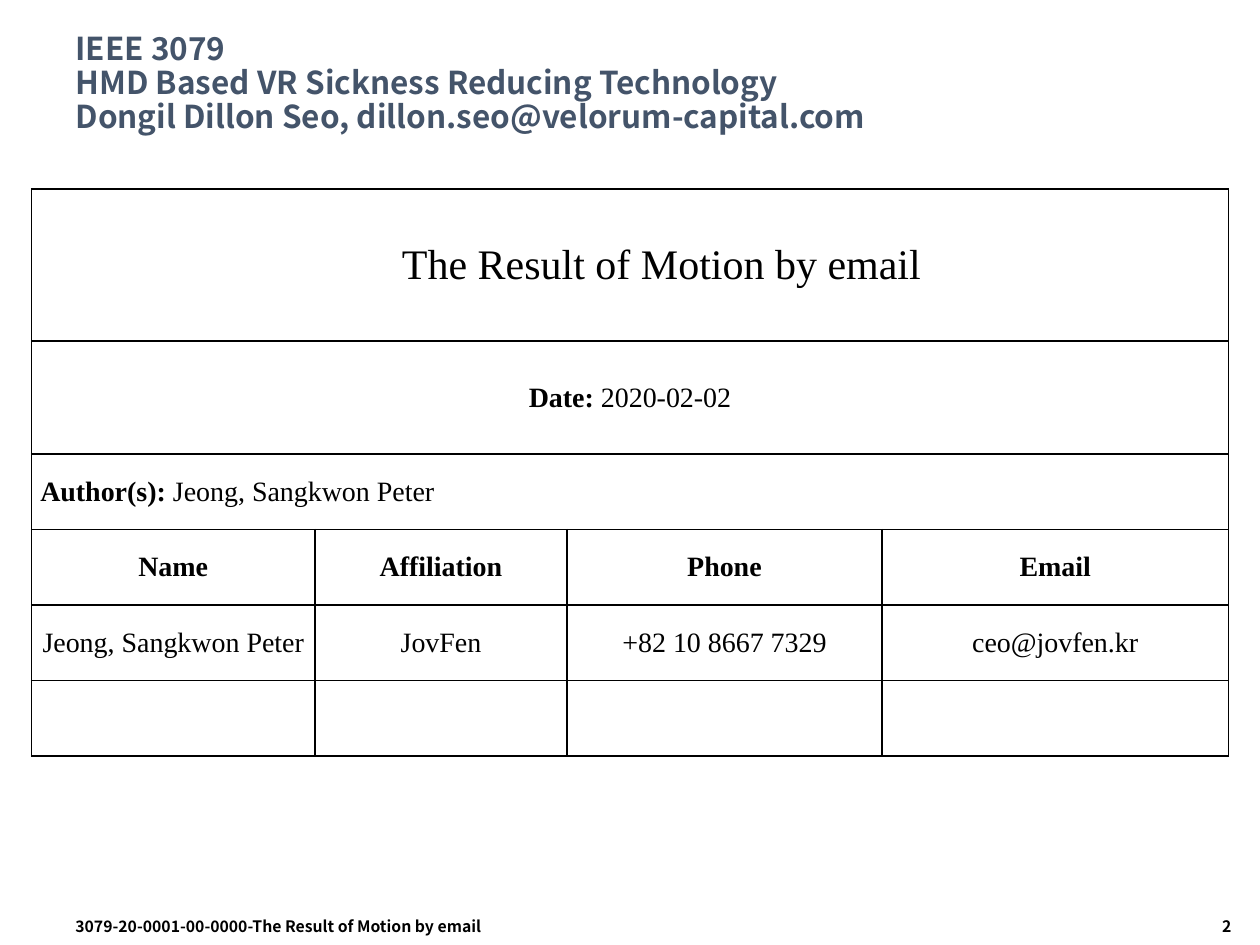
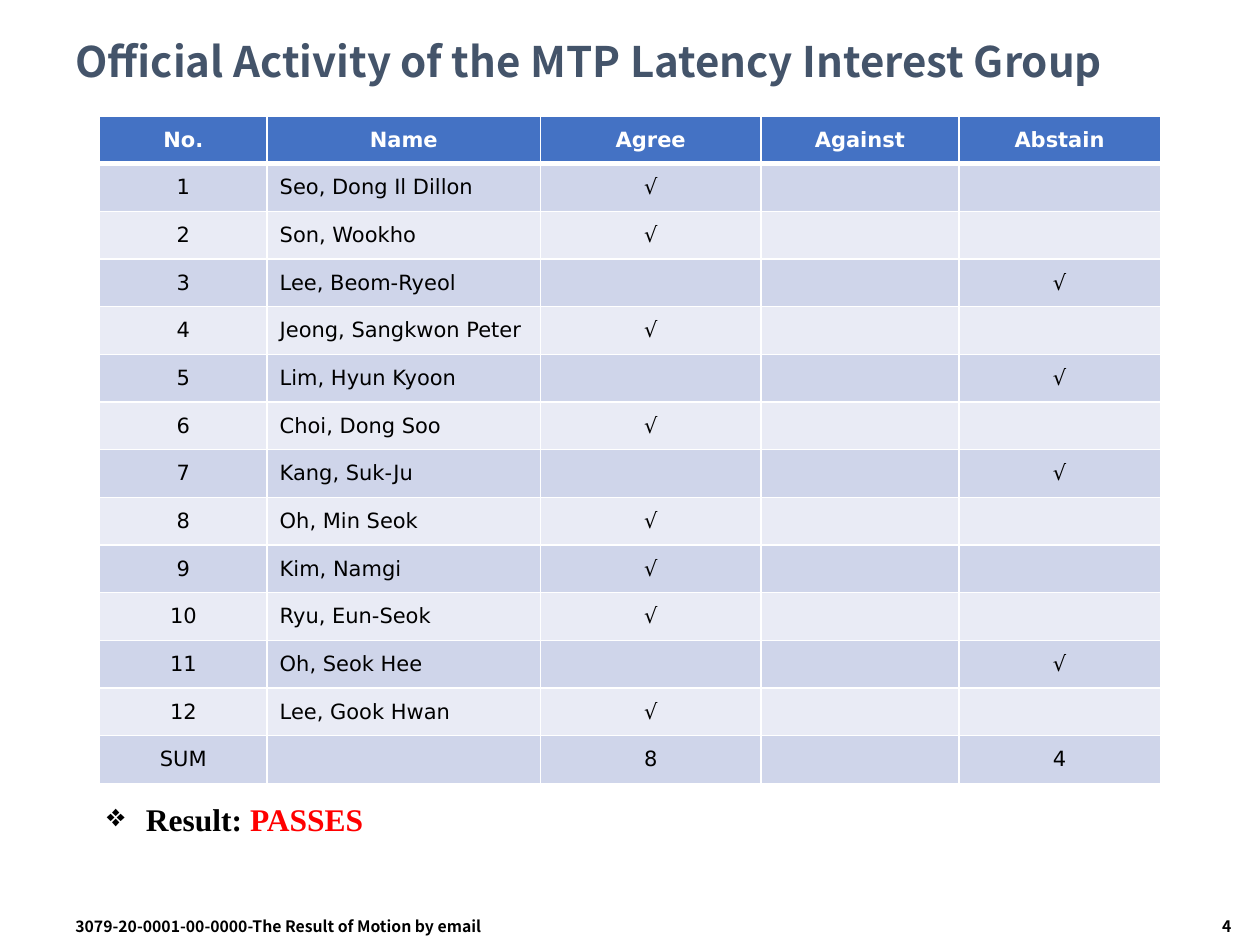
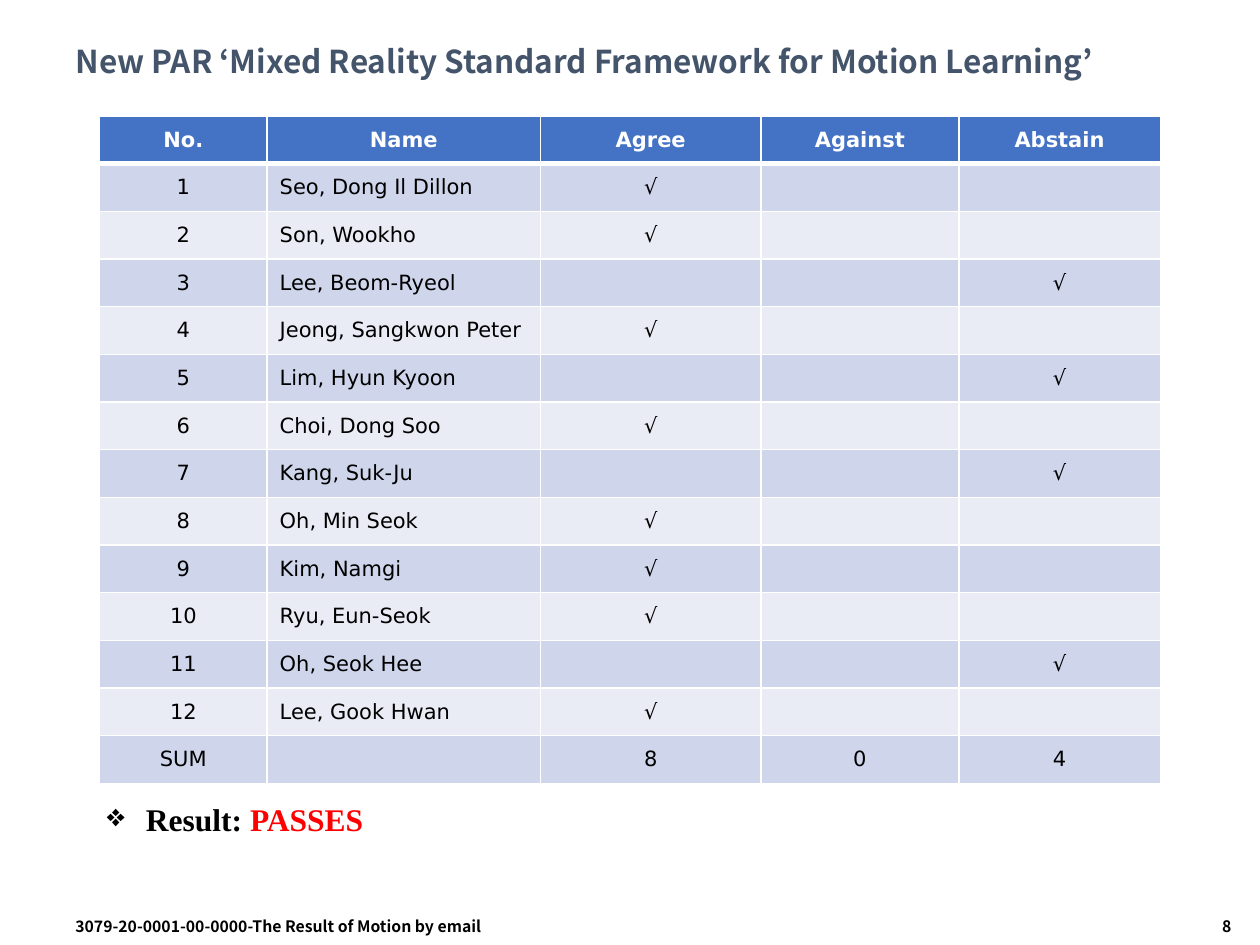
"""Build the three slides reporting the result of a motion by email."""
from dataclasses import dataclass
from typing import Optional

from lxml import etree
from pptx import Presentation
from pptx import util as u
from pptx.dml.color import RGBColor
from pptx.enum import text
from pptx.oxml import ns

SLIDE_WIDTH, SLIDE_HEIGHT = u.Inches(10), u.Inches(7.5)
GRID_COLUMNS, GRID_ROWS = 100, 75

BLACK = RGBColor(0x00, 0x00, 0x00)
WHITE = RGBColor(0xFF, 0xFF, 0xFF)
RED = RGBColor(0xFF, 0x00, 0x00)
TITLE_SLATE = RGBColor(0x44, 0x54, 0x6A)
HEADER_BLUE = RGBColor(0x44, 0x72, 0xC4)
BANDS = (RGBColor(0xE9, 0xEB, 0xF5), RGBColor(0xCF, 0xD5, 0xEA))

LEFT, CENTER, RIGHT = text.PP_ALIGN.LEFT, text.PP_ALIGN.CENTER, text.PP_ALIGN.RIGHT
FOOTER_TEXT = "3079-20-0001-00-0000-The Result of Motion by email"
VOTE_HEADINGS = ("No.", "Name", "Agree", "Against", "Abstain")
VOTERS = (
    "Seo, Dong Il Dillon", "Son, Wookho", "Lee, Beom-Ryeol", "Jeong, Sangkwon Peter",
    "Lim, Hyun Kyoon", "Choi, Dong Soo", "Kang, Suk-Ju", "Oh, Min Seok",
    "Kim, Namgi", "Ryu, Eun-Seok", "Oh, Seok Hee", "Lee, Gook Hwan",
)
ABSTAINERS = {3, 5, 7, 11}


@dataclass(frozen=True)
class Frame:
    """A rectangle in grid columns and rows."""
    column: float
    row: float
    columns: float
    rows: float

    def lengths(self) -> tuple:
        """Return left, top, width and height as lengths."""
        across, down = SLIDE_WIDTH / GRID_COLUMNS, SLIDE_HEIGHT / GRID_ROWS
        return (u.Emu(round(self.column * across)), u.Emu(round(self.row * down)),
                u.Emu(round(self.columns * across)), u.Emu(round(self.rows * down)))


@dataclass(frozen=True)
class Style:
    """The look of a run of text."""
    font: str
    size: float
    color: RGBColor = BLACK
    bold: bool = False


@dataclass(frozen=True)
class Piece:
    """Some text in one style."""
    words: str
    style: Style


@dataclass(frozen=True)
class Borders:
    """Line widths in points around a cell, in one colour."""
    color: RGBColor
    top: float = 1
    bottom: float = 1


@dataclass(frozen=True)
class Ballot:
    """A slide that shows how the members voted."""
    title: str
    title_size: float
    page: int
    against: str


FOOTER = Style("Noto Sans CJK KR", 9, bold=True)
COVER_HEADING = Style("Times New Roman", 24)
COVER = Style("Times New Roman", 16)
COVER_BOLD = Style("Times New Roman", 16, bold=True)
VOTE_HEADER = Style("DejaVu Sans", 12, WHITE, True)
VOTE = Style("DejaVu Sans", 12)
RESULT = Style("Times New Roman", 18, bold=True)
VERDICT = Style("Times New Roman", 18, RED, True)

COVER_TITLE_FRAME = Frame(5, 1.7, 90, 10)
TITLE_FRAME = Frame(5, 1.7, 90, 6.7)
FOOTER_FRAME = Frame(5, 72.3, 44.2, 2.7)
PAGE_FRAME = Frame(82.5, 72.3, 16.2, 2.7)
COVER_FRAME = Frame(2.5, 15, 95, 45)
VOTE_FRAME = Frame(7.9, 9.2, 84.2, 53)
RESULT_FRAME = Frame(7.5, 63, 22.6, 4)

COVER_COLUMNS = (2.25, 2, 2.5, 2.75)
COVER_ROWS = (1.21, 0.9, 0.6, 0.6, 0.6, 0.6)
VOTE_COLUMNS = (1.33, 2.17, 1.75, 1.57, 1.6)

BALLOTS = (
    Ballot("Official Activity of the MTP Latency Interest Group", 24, 4, ""),
    Ballot("New PAR ‘Mixed Reality Standard Framework for Motion Learning’", 18, 8, "0"),
)


def write(paragraph, *pieces: Piece, align=LEFT) -> None:
    """Write styled runs into a paragraph."""
    paragraph.alignment = align
    for piece in pieces:
        run = paragraph.add_run()
        run.text = piece.words
        font = run.font
        font.name, font.size = piece.style.font, u.Pt(piece.style.size)
        font.bold = piece.style.bold
        font.color.rgb = piece.style.color


def add_text(slide, frame: Frame, *pieces: Piece, align=LEFT):
    """Add a wrapped text box and return it."""
    box = slide.shapes.add_textbox(*frame.lengths())
    box.text_frame.word_wrap = True
    write(box.text_frame.paragraphs[0], *pieces, align=align)
    return box


def add_slide(presentation, frame: Frame, lines: tuple, title_size: float, page: int):
    """Add a slide with its title, footer and page number."""
    slide = presentation.slides.add_slide(presentation.slide_layouts[5])
    title = slide.shapes.title
    title.left, title.top, title.width, title.height = frame.lengths()
    title.text_frame.auto_size = text.MSO_AUTO_SIZE.NONE
    title.text_frame.vertical_anchor = text.MSO_ANCHOR.MIDDLE
    paragraph = title.text_frame.paragraphs[0]
    paragraph.line_spacing = 0.9
    style = Style("Noto Sans CJK KR", title_size, TITLE_SLATE, True)
    for index, line in enumerate(lines):
        if index:
            paragraph.add_line_break()
        write(paragraph, Piece(line, style))
    add_text(slide, PAGE_FRAME, Piece(str(page), FOOTER), align=RIGHT)
    add_text(slide, FOOTER_FRAME, Piece(FOOTER_TEXT, FOOTER))
    return slide


def add_grid(slide, frame: Frame, column_shares: tuple, row_shares: tuple):
    """Add a plain table whose columns and rows share out the frame."""
    shape = slide.shapes.add_table(len(row_shares), len(column_shares), *frame.lengths())
    width, height = shape.width, shape.height
    table = shape.table
    table.first_row = table.horz_banding = False
    for column, share in zip(table.columns, column_shares):
        column.width = u.Emu(round(width * share / sum(column_shares)))
    for row, share in zip(table.rows, row_shares):
        row.height = u.Emu(round(height * share / sum(row_shares)))
    return table


def format_cell(cell, borders: Borders, fill: Optional[RGBColor], empty_size: float) -> None:
    """Set a cell's borders, fill, anchor and empty text height."""
    cell.vertical_anchor = text.MSO_ANCHOR.MIDDLE
    properties = cell._tc.get_or_add_tcPr()
    for side, points in (("L", 1), ("R", 1), ("T", borders.top), ("B", borders.bottom)):
        line = etree.SubElement(properties, ns.qn(f"a:ln{side}"), w=str(u.Pt(points)))
        solid = etree.SubElement(line, ns.qn("a:solidFill"))
        etree.SubElement(solid, ns.qn("a:srgbClr"), val=str(borders.color))
    if fill is None:
        cell.fill.background()
    else:
        cell.fill.solid()
        cell.fill.fore_color.rgb = fill
    paragraph = cell.text_frame.paragraphs[0]
    if not paragraph.runs:
        etree.SubElement(paragraph._p, ns.qn("a:endParaRPr"), sz=str(round(empty_size * 100)))


def build_cover(presentation) -> None:
    """Build the slide that names the document and its author."""
    lines = ("IEEE 3079", "HMD Based VR Sickness Reducing Technology",
             "Dongil Dillon Seo, dillon.seo@velorum-capital.com")
    slide = add_slide(presentation, COVER_TITLE_FRAME, lines, 18, 2)
    table = add_grid(slide, COVER_FRAME, COVER_COLUMNS, COVER_ROWS)
    banners = (
        ((Piece("The Result of Motion by email", COVER_HEADING),), CENTER),
        ((Piece("Date:", COVER_BOLD), Piece(" 2020-02-02", COVER)), CENTER),
        ((Piece("Author(s): ", COVER_BOLD), Piece("Jeong, Sangkwon Peter", COVER)), LEFT),
    )
    for row, (pieces, align) in enumerate(banners):
        table.cell(row, 0).merge(table.cell(row, len(COVER_COLUMNS) - 1))
        paragraph = table.cell(row, 0).text_frame.paragraphs[0]
        write(paragraph, *pieces, align=align)
        if align == CENTER:
            paragraph.space_after = u.Pt(12)
    heading = table.cell(0, 0).text_frame.paragraphs[0]
    heading._p.get_or_add_pPr().set("marL", str(u.Inches(0.5)))
    contacts = (
        (("Name", "Affiliation", "Phone", "Email"), COVER_BOLD),
        (("Jeong, Sangkwon Peter", "JovFen", "+82 10 8667 7329", "ceo@jovfen.kr"), COVER),
    )
    for row, (entries, style) in enumerate(contacts, len(banners)):
        for column, entry in enumerate(entries):
            write(table.cell(row, column).text_frame.paragraphs[0],
                  Piece(entry, style), align=CENTER)
    for cell in table.iter_cells():
        cell.margin_left = cell.margin_right = u.Inches(0.07)
        cell.margin_top = cell.margin_bottom = 0
        format_cell(cell, Borders(BLACK), None, COVER.size)


def vote_rows(against: str) -> list:
    """Return the heading, one row for each voter and the sums."""
    rows = [VOTE_HEADINGS]
    for number, name in enumerate(VOTERS, 1):
        marks = ("", "", "√") if number in ABSTAINERS else ("√", "", "")
        rows.append((str(number), name, *marks))
    abstained = len(ABSTAINERS)
    rows.append(("SUM", "", str(len(VOTERS) - abstained), against, str(abstained)))
    return rows


def add_result(slide) -> None:
    """Add the bulleted verdict below the votes."""
    box = add_text(slide, RESULT_FRAME, Piece("Result: ", RESULT), Piece("PASSES", VERDICT))
    box.text_frame.word_wrap = False
    box.text_frame.auto_size = text.MSO_AUTO_SIZE.SHAPE_TO_FIT_TEXT
    properties = box.text_frame.paragraphs[0]._p.get_or_add_pPr()
    indent = u.Inches(0.31)
    properties.set("marL", str(indent))
    properties.set("indent", str(-indent))
    etree.SubElement(properties, ns.qn("a:buChar"), char="❖")


def build_ballot(presentation, ballot: Ballot) -> None:
    """Build a slide with the votes and the verdict."""
    slide = add_slide(presentation, TITLE_FRAME, (ballot.title,), ballot.title_size, ballot.page)
    rows = vote_rows(ballot.against)
    table = add_grid(slide, VOTE_FRAME, VOTE_COLUMNS, (1,) * len(rows))
    for row, entries in enumerate(rows):
        is_header = row == 0
        style = VOTE_HEADER if is_header else VOTE
        fill = HEADER_BLUE if is_header else BANDS[row % 2]
        borders = Borders(WHITE, top=3 if row == 1 else 1, bottom=3 if is_header else 1)
        for column, entry in enumerate(entries):
            cell = table.cell(row, column)
            if entry:
                is_name = column == 1 and not is_header
                write(cell.text_frame.paragraphs[0], Piece(entry, style),
                      align=LEFT if is_name else CENTER)
            format_cell(cell, borders, fill, VOTE.size)
    add_result(slide)


def main() -> None:
    """Build and save the presentation."""
    presentation = Presentation()
    presentation.slide_width, presentation.slide_height = SLIDE_WIDTH, SLIDE_HEIGHT
    build_cover(presentation)
    for ballot in BALLOTS:
        build_ballot(presentation, ballot)
    presentation.save("out.pptx")


if __name__ == "__main__":
    main()
